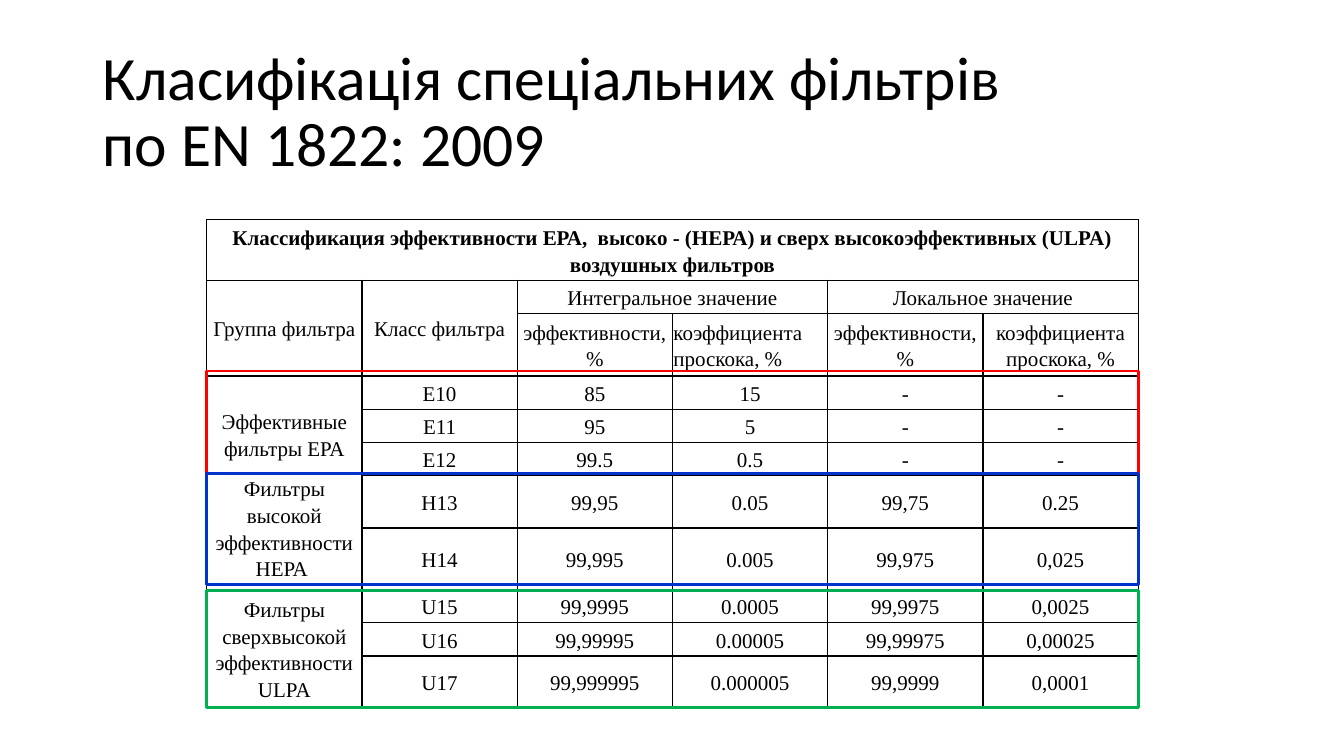
from lxml.etree import SubElement
from pptx import Presentation
from pptx.dml.color import RGBColor
from pptx.enum.shapes import MSO_CONNECTOR as CONN, MSO_SHAPE as SHAPE
from pptx.enum.text import MSO_ANCHOR as ANCHOR, MSO_AUTO_SIZE as AUTO, PP_ALIGN as ALIGN
from pptx.oxml.ns import qn
from pptx.util import Inches, Pt

# Content
TITLE = ("Класифікація спеціальних фільтрів ", "по EN 1822: 2009")
CAPTION = ("Классификация эффективности ЕРА,  высоко - (НЕРА) "
           "и сверх высокоэффективных (ULPA) воздушных фильтров")
EFFICIENCY, LEAKAGE = "эффективности, %", "коэффициента проскока, %"
# Headings and groups: row, column, row span, column span, paragraphs
HEADINGS = [
    (0, 0, 1, 6, [CAPTION]),
    (1, 0, 2, 1, ["Группа фильтра"]),
    (1, 1, 2, 1, ["Класс фильтра"]),
    (1, 2, 1, 2, ["Интегральное значение"]),
    (1, 4, 1, 2, ["Локальное значение"]),
    (2, 2, 1, 1, [EFFICIENCY]),
    (2, 3, 1, 1, [LEAKAGE]),
    (2, 4, 1, 1, [EFFICIENCY]),
    (2, 5, 1, 1, [LEAKAGE]),
    (3, 0, 5, 1, ["Эффективные фильтры ЕРА", "Фильтры высокой эффективности НЕРА "]),
    (8, 0, 3, 1, ["Фильтры сверхвысокой эффективности ULPA"]),
]
CLASSES = [
    ("Е10", "85", "15", "-", "-"),
    ("Е11", "95", "5", "-", "-"),
    ("Е12", "99.5", "0.5", "-", "-"),
    ("Н13", "99,95", "0.05", "99,75", "0.25"),
    ("Н14", "99,995", "0.005", "99,975", "0,025"),
    ("U15", "99,9995", "0.0005", "99,9975", "0,0025"),
    ("U16", "99,99995", "0.00005", "99,99975", "0,00025"),
    ("U17", "99,999995", "0.000005", "99,9999", "0,0001"),
]
FRAMES = [("red", 3.68, 1.02), ("green", 5.86, 1.16), ("blue", 4.7, 1.1)]  # top, height

COLORS = {"black": "000000", "red": "FF0000", "green": "00B050", "blue": "0033CC"}
LEFT, TOP, COL_W = 2.05, 2.18, 1.54
ROW_H = [0.6, 0.33, 0.62, 0.33, 0.33, 0.33, 0.52, 0.61, 0.33, 0.33, 0.51]
FIRST_CLASS_ROW = 3
CELL_MARGIN, GROUP_TOP_MARGIN = 0.01, 0.24


def color(name):
    return RGBColor.from_string(COLORS[name])


def add_run(p, text, size, font, bold=False):
    r = p.add_run()
    r.text = text
    r.font.size, r.font.name, r.font.bold = Pt(size), font, bold
    r.font.color.rgb = color("black")


def set_borders(cell):
    tc_pr = cell._tc.get_or_add_tcPr()
    for side in ("a:lnL", "a:lnR", "a:lnT", "a:lnB"):
        ln = SubElement(tc_pr, qn(side), w=str(Pt(1)))
        fill = SubElement(ln, qn("a:solidFill"))
        SubElement(fill, qn("a:srgbClr"), val=COLORS["black"])


def write_cell(cell, paragraphs, after=0, bold=False, align=ALIGN.CENTER):
    tf = cell.text_frame
    for i, text in enumerate(paragraphs):
        p = tf.add_paragraph() if i else tf.paragraphs[0]
        p.alignment, p.line_spacing, p.space_after = align, 1.15, Pt(after)
        add_run(p, text, 15, "Times New Roman", bold)


prs = Presentation()
prs.slide_width, prs.slide_height = Inches(13.33), Inches(7.5)
s = prs.slides.add_slide(prs.slide_layouts[5])

# Title
title = s.shapes.title
title.left, title.top, title.width, title.height = map(Inches, (0.92, 0.4, 11.5, 1.45))
tf = title.text_frame
tf.auto_size, tf.word_wrap, tf.vertical_anchor = AUTO.NONE, True, ANCHOR.MIDDLE
p = tf.paragraphs[0]
p.alignment, p.line_spacing = ALIGN.LEFT, 0.9
add_run(p, TITLE[0], 44, "Calibri")
p.add_line_break()
add_run(p, TITLE[1], 44, "Calibri")

# Table grid
columns = 6
table = s.shapes.add_table(len(ROW_H), columns, Inches(LEFT), Inches(TOP),
                           Inches(COL_W * columns), Inches(sum(ROW_H))).table
table.first_row = table.horz_banding = False
for col in table.columns:
    col.width = Inches(COL_W)
for row, height in zip(table.rows, ROW_H):
    row.height = Inches(height)
for cell in table.iter_cells():
    set_borders(cell)
    cell.fill.background()
    cell.vertical_anchor = ANCHOR.MIDDLE
    cell.margin_left = cell.margin_right = Inches(CELL_MARGIN)
    cell.margin_top = cell.margin_bottom = Inches(CELL_MARGIN)

# Headings and filter groups
for row, col, row_span, col_span, paragraphs in HEADINGS:
    cell = table.cell(row, col)
    if row_span * col_span > 1:
        cell.merge(table.cell(row + row_span - 1, col + col_span - 1))
    left_aligned = (row, col) == (2, 3)
    write_cell(cell, paragraphs, after=0 if left_aligned else 10, bold=row == 0,
               align=ALIGN.LEFT if left_aligned else ALIGN.CENTER)
table.cell(FIRST_CLASS_ROW, 0).margin_top = Inches(GROUP_TOP_MARGIN)

# Filter classes
for row, values in enumerate(CLASSES, FIRST_CLASS_ROW):
    for col, value in enumerate(values, 1):
        write_cell(table.cell(row, col), [value])

# Divider between the two groups that share a cell
divider = s.shapes.add_connector(CONN.STRAIGHT, Inches(3.57), Inches(4.7),
                                 Inches(LEFT), Inches(4.7))
divider.line.color.rgb, divider.line.width = color("black"), Pt(0.75)
SubElement(divider._element.spPr, qn("a:effectLst"))

# Coloured frames around the groups
for name, top, height in FRAMES:
    sp = s.shapes.add_shape(SHAPE.RECTANGLE, Inches(LEFT), Inches(top),
                            Inches(9.24), Inches(height))
    sp.shadow.inherit = False
    sp.fill.background()
    sp.line.color.rgb, sp.line.width = color(name), Pt(2)

prs.save("out.pptx")
